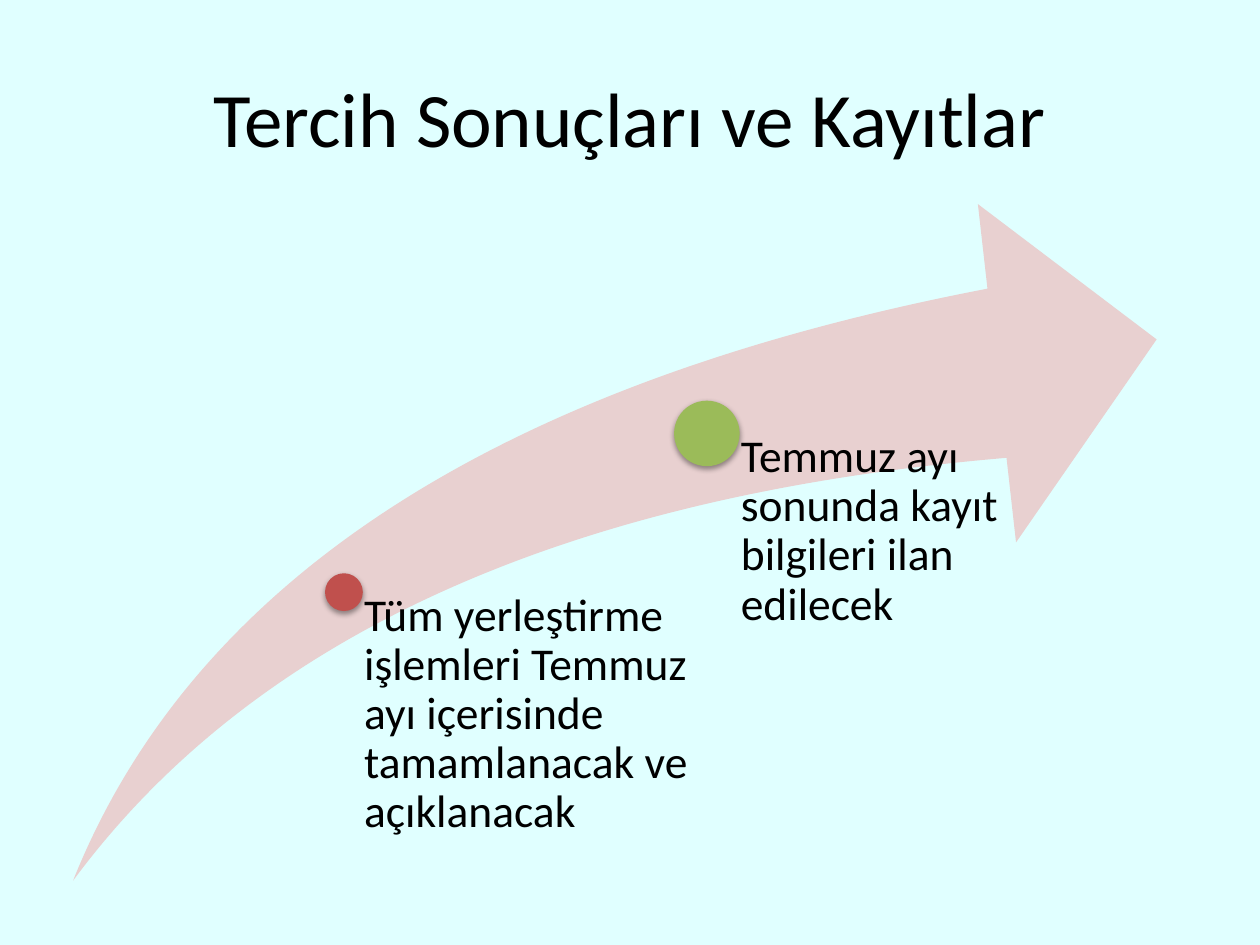
import pptx
import pptx.util
import pptx.dml.color
import pptx.enum.shapes
import pptx.enum.text
import pptx.oxml
import pptx.oxml.ns

Inches, Pt = pptx.util.Inches, pptx.util.Pt
RGBColor = pptx.dml.color.RGBColor
MSO_SHAPE = pptx.enum.shapes.MSO_SHAPE
MSO_ANCHOR = pptx.enum.text.MSO_ANCHOR
PP_ALIGN = pptx.enum.text.PP_ALIGN

BACKGROUND = RGBColor(0xE0, 0xFF, 0xFF)
ARROW = RGBColor(0xE8, 0xD0, 0xD0)
RED = RGBColor(0xC0, 0x50, 0x4D)
GREEN = RGBColor(0x9B, 0xBB, 0x59)
BLACK = RGBColor(0, 0, 0)

FONT = "Calibri"
TEXT_WIDTH = 2.79
TEXT_BOTTOM = 6.99

# Milestones: centre x, centre y, diameter, colour, text
MILESTONES = [
    (2.73, 4.7, 0.3, RED,
     "Tüm yerleştirme işlemleri Temmuz ayı içerisinde tamamlanacak ve açıklanacak"),
    (5.61, 3.44, 0.52, GREEN,
     "Temmuz ayı sonunda kayıt bilgileri ilan edilecek"),
]


def format_text(p, size):
    for r in p.runs:
        r.font.name = FONT
        r.font.size = Pt(size)
        r.font.color.rgb = BLACK


def add_title(s, text):
    sp = s.shapes.title
    sp.left, sp.top, sp.width, sp.height = map(Inches, (0.5, 0.3, 9, 1.25))
    tf = sp.text_frame
    tf.text = text
    tf.vertical_anchor = MSO_ANCHOR.MIDDLE
    tf.paragraphs[0].alignment = PP_ALIGN.CENTER
    format_text(tf.paragraphs[0], 44)


def add_filled(s, kind, left, top, width, height, color):
    sp = s.shapes.add_shape(kind, *map(Inches, (left, top, width, height)))
    sp.fill.solid()
    sp.fill.fore_color.rgb = color
    sp.line.fill.background()
    sp.shadow.inherit = False
    return sp


def add_drop_shadow(sp):
    effects = sp.element.spPr.find(pptx.oxml.ns.qn("a:effectLst"))
    effects.append(pptx.oxml.parse_xml(
        f'<a:outerShdw {pptx.oxml.ns.nsdecls("a")} blurRad="{Pt(3.1)}" '
        f'dist="{Pt(1.6)}" dir="5400000" rotWithShape="0">'
        '<a:srgbClr val="000000"><a:alpha val="38000"/></a:srgbClr>'
        '</a:outerShdw>'))


def add_milestone(s, x, y, diameter, color, text):
    # Dot on the arrow
    radius = diameter / 2
    dot = add_filled(s, MSO_SHAPE.OVAL, x - radius, y - radius,
                     diameter, diameter, color)
    add_drop_shadow(dot)

    # Text starts at the dot's centre and is inset past its edge
    box = s.shapes.add_textbox(Inches(x), Inches(y), Inches(TEXT_WIDTH),
                               Inches(TEXT_BOTTOM - y))
    tf = box.text_frame
    tf.word_wrap = True
    tf.margin_left = Inches(radius + 0.01)
    tf.margin_top = tf.margin_right = tf.margin_bottom = 0
    tf.text = text
    tf.paragraphs[0].line_spacing = 0.9
    format_text(tf.paragraphs[0], 26)


def main():
    prs = pptx.Presentation()
    prs.slide_width, prs.slide_height = Inches(10), Inches(7.5)
    s = prs.slides.add_slide(prs.slide_layouts[5])
    s.background.fill.solid()
    s.background.fill.fore_color.rgb = BACKGROUND

    add_title(s, "Tercih Sonuçları ve Kayıtlar")

    # Rising arrow
    arrow = add_filled(s, MSO_SHAPE.SWOOSH_ARROW, 0.58, 1.62, 8.6, 5.37, ARROW)
    arrow.adjustments[0] = 0.25
    arrow.adjustments[1] = 0.25

    for milestone in MILESTONES:
        add_milestone(s, *milestone)

    prs.save("out.pptx")


if __name__ == "__main__":
    main()
